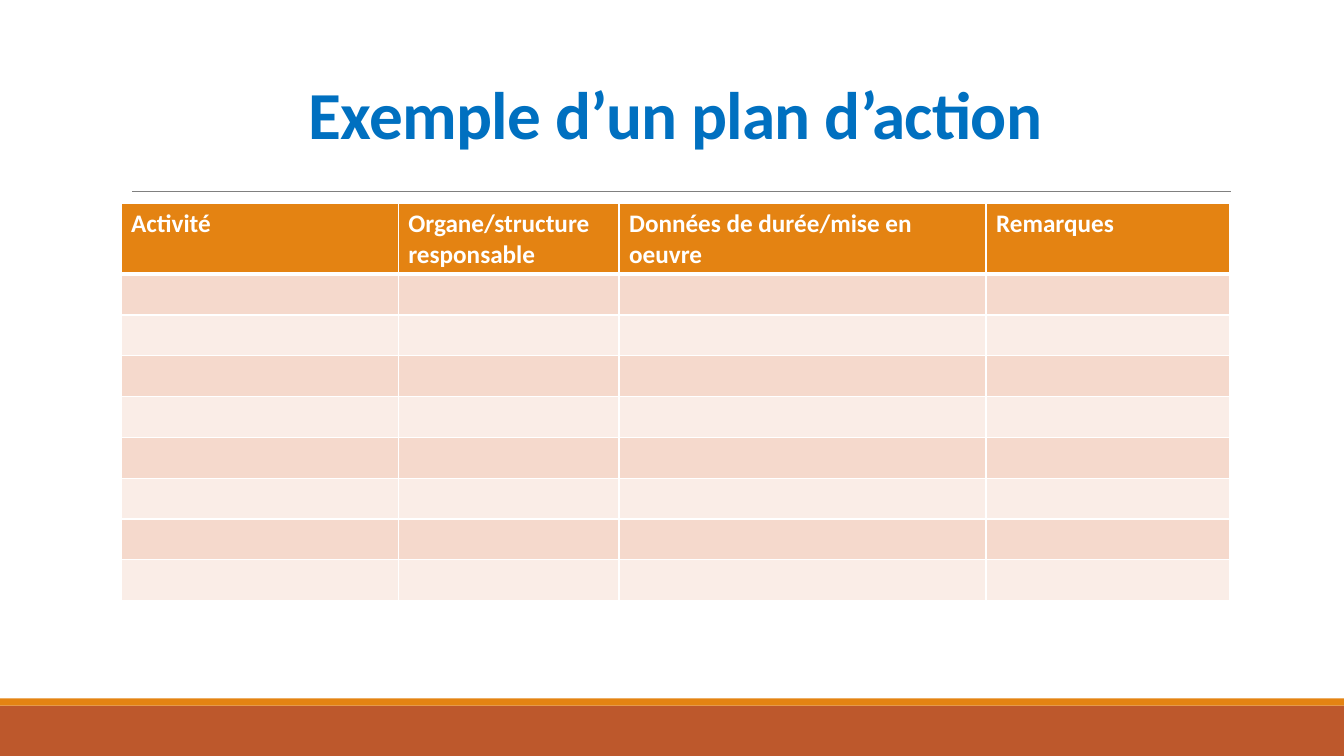
"""Build the slide showing an empty action plan table."""
from lxml.etree import SubElement
from pptx import Presentation
from pptx.dml.color import RGBColor
from pptx.enum.shapes import MSO_CONNECTOR, MSO_SHAPE
from pptx.enum.text import MSO_ANCHOR, PP_ALIGN
from pptx.oxml.ns import qn
from pptx.util import Inches, Pt

WHITE = RGBColor(0xFF, 0xFF, 0xFF)
BLUE = RGBColor(0x00, 0x70, 0xC0)
GREY = RGBColor(0x80, 0x80, 0x80)
ORANGE = RGBColor(0xE4, 0x83, 0x12)
RUST = RGBColor(0xBD, 0x58, 0x2C)
BANDS = [RGBColor(0xFA, 0xED, 0xE7), RGBColor(0xF5, 0xD9, 0xCC)]
FONT = "Calibri"

HEADINGS = ["Activité", "Organe/structure responsable",
            "Données de durée/mise en oeuvre", "Remarques"]
COLUMN_WIDTHS = [2.75, 2.19, 3.64, 2.42]
HEADER_HEIGHT, ROW_HEIGHT, EMPTY_ROWS = 0.7, 0.405, 8
LEFT, WIDTH = Inches(1.2), Inches(sum(COLUMN_WIDTHS))


def style_run(run, size, color):
    run.font.name = FONT
    run.font.size = Pt(size)
    run.font.bold = True
    run.font.color.rgb = color


def add_border(cell, side, points):
    line = SubElement(cell._tc.get_or_add_tcPr(), qn(f"a:ln{side}"), w=str(Pt(points)))
    SubElement(SubElement(line, qn("a:solidFill")), qn("a:srgbClr"), val=str(WHITE))


prs = Presentation()
prs.slide_width, prs.slide_height = Inches(13.33), Inches(7.5)
slide = prs.slides.add_slide(prs.slide_layouts[6])
shapes = slide.shapes

for top, height, color in [(7, 0.5, RUST), (6.93, 0.07, ORANGE)]:
    band = shapes.add_shape(MSO_SHAPE.RECTANGLE, 0, Inches(top), prs.slide_width, Inches(height))
    band.shadow.inherit = False
    band.fill.solid()
    band.fill.fore_color.rgb = color
    band.line.fill.background()

rule = shapes.add_connector(MSO_CONNECTOR.STRAIGHT, Inches(1.31), Inches(1.9), Inches(12.21), Inches(1.9))
rule.line.color.rgb = GREY
rule.line.width = Pt(0.5)
SubElement(rule._element.spPr, qn("a:effectLst"))

title = shapes.add_textbox(LEFT, Inches(0.31), WIDTH, Inches(1.26)).text_frame
title.word_wrap = True
title.vertical_anchor = MSO_ANCHOR.BOTTOM
title.text = "Exemple d’un plan d’action"
heading = title.paragraphs[0]
heading.alignment = PP_ALIGN.CENTER
heading.line_spacing = 0.85
style_run(heading.runs[0], 48, BLUE)
heading.runs[0].font._element.set("spc", "-50")

plan_height = Inches(HEADER_HEIGHT + EMPTY_ROWS * ROW_HEIGHT)
plan = shapes.add_table(EMPTY_ROWS + 1, len(HEADINGS), LEFT, Inches(2.02), WIDTH, plan_height).table
plan.horz_banding = False
for column, width in zip(plan.columns, COLUMN_WIDTHS):
    column.width = Inches(width)

for r, row in enumerate(plan.rows):
    row.height = Inches(ROW_HEIGHT if r else HEADER_HEIGHT)
    for cell, text in zip(row.cells, HEADINGS):
        for side in "LRTB":
            thick = (r == 0 and side == "B") or (r == 1 and side == "T")
            add_border(cell, side, 3 if thick else 1)
        cell.fill.solid()
        cell.fill.fore_color.rgb = BANDS[r % 2] if r else ORANGE
        if r == 0:
            cell.text = text
            style_run(cell.text_frame.paragraphs[0].runs[0], 18, WHITE)

prs.save("out.pptx")
